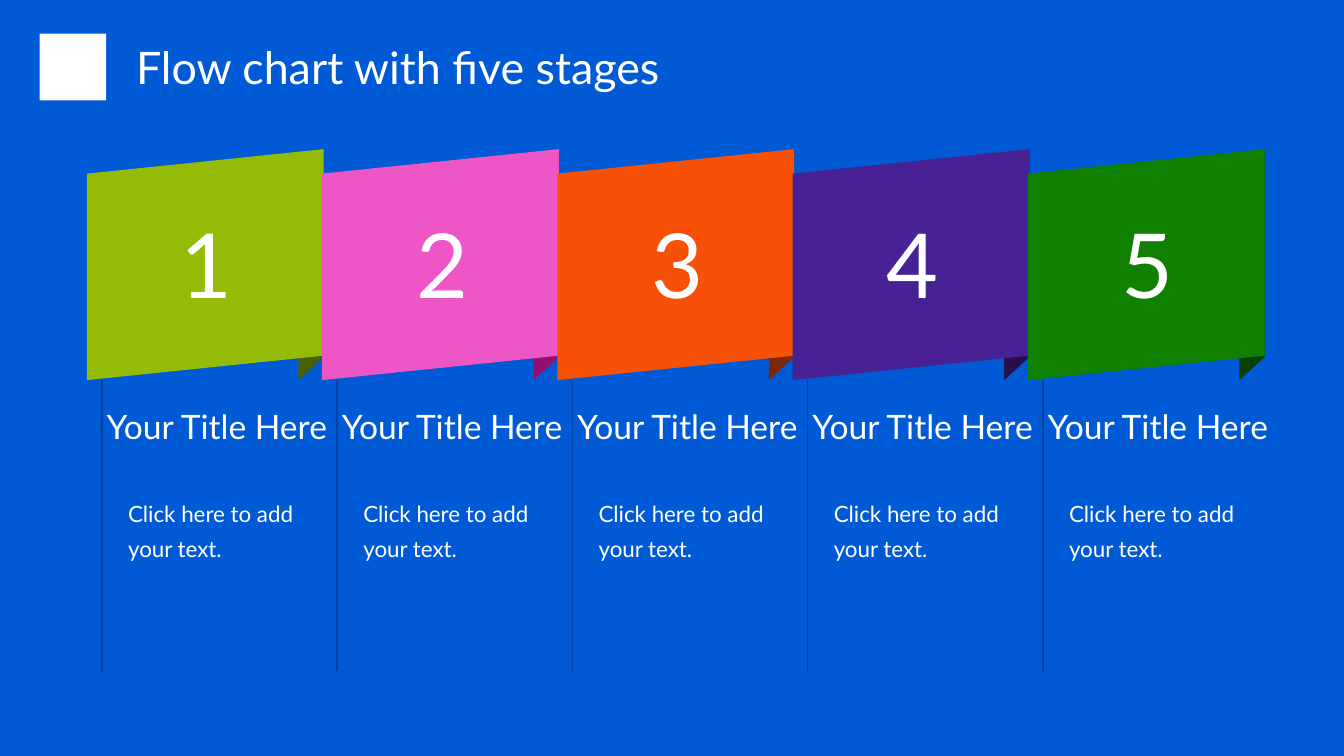
from dataclasses import dataclass

from lxml import etree
from pptx import Presentation
from pptx.dml.color import RGBColor
from pptx.enum.shapes import MSO_CONNECTOR, MSO_SHAPE
from pptx.enum.text import MSO_ANCHOR as Anchor, PP_ALIGN as Align
from pptx.oxml.ns import qn
from pptx.util import Cm, Pt


@dataclass(frozen=True)
class Theme:
    font: str = "Lato"
    background: str = "005AD5"
    text: str = "FFFFFF"
    divider: str = "0044A0"
    panels: tuple = ("94BB06", "EE56C5", "F65107", "482195", "0F8000")
    folds: tuple = ("4A5E03", "930F6F", "7B2804", "24104A", "084000")
    heading_size: int = 32
    number_size: int = 64
    title_size: int = 24
    body_size: int = 16


THEME = Theme()


def rgb(value):
    return RGBColor.from_string(value)


def add_filled(shapes, kind, left, top, width, height, color):
    sp = shapes.add_shape(kind, Cm(left), Cm(top), Cm(width), Cm(height))
    sp.shadow.inherit = False
    sp.fill.solid()
    sp.fill.fore_color.rgb = rgb(color)
    sp.line.fill.background()
    return sp


def add_slanted(shapes, left, top, width, height, slant, color):
    """Parallelogram with upright sides, turned to fill the given box."""
    shift = (width - height) / 2
    sp = add_filled(shapes, MSO_SHAPE.PARALLELOGRAM, left + shift, top - shift,
                    height, width, color)
    sp.adjustments[0] = slant
    sp.rotation = 270
    sp.element.spPr.find(qn("a:xfrm")).set("flipV", "1")


def add_text(shapes, left, top, width, height, text, size, align=Align.LEFT,
             anchor=Anchor.TOP, spacing=1.0):
    tf = shapes.add_textbox(Cm(left), Cm(top), Cm(width), Cm(height)).text_frame
    tf.word_wrap = True
    tf.vertical_anchor = anchor
    p = tf.paragraphs[0]
    p.text = text
    p.alignment = align
    p.line_spacing = spacing
    p.font.name = THEME.font
    p.font.size = Pt(size)
    p.font.color.rgb = rgb(THEME.text)


def add_divider(shapes, x, top, bottom):
    line = shapes.add_connector(MSO_CONNECTOR.STRAIGHT, Cm(x), Cm(top), Cm(x), Cm(bottom))
    line.line.color.rgb = rgb(THEME.divider)
    line.line.width = Pt(1)
    etree.SubElement(line.element.spPr, qn("a:effectLst"))


def add_header(slide, left, top, width, height):
    # Plain square in the emblem's place, then the heading
    side = 1.68
    add_filled(slide.shapes, MSO_SHAPE.RECTANGLE, left, top + (height - side) / 2,
               side, side, THEME.text)
    add_text(slide.shapes, left + 2.18, top, width - 2.18, height,
             "Flow chart with five stages", THEME.heading_size, anchor=Anchor.MIDDLE)


def add_stage(slide, left, top, width, height, number, panel_color, fold_color):
    shapes = slide.shapes.add_group_shape().shapes
    panel_height = 5.82

    # Folded ribbon
    add_slanted(shapes, left + width - 0.64, top, 0.64, panel_height, 0.908, fold_color)
    add_slanted(shapes, left, top, width, panel_height, 0.106, panel_color)

    # Divider and captions
    add_divider(shapes, left + 0.38, top + panel_height, top + height)
    add_text(shapes, left + 0.79, top + 8.51, 4.98, 2.03,
             "Click here to add your text.", THEME.body_size, spacing=1.3)
    add_text(shapes, left, top + 6.05, 6.55, 1.65, "Your Title Here",
             THEME.title_size, Align.CENTER, spacing=1.3)
    add_text(shapes, left + 0.93, top + 1.37, 4.19, 3, str(number),
             THEME.number_size, Align.CENTER, Anchor.MIDDLE)


def add_stages(slide, left, top, width, height):
    panel_width = 5.97
    pitch = (width - panel_width) / (len(THEME.panels) - 1)
    for i, colors in enumerate(zip(THEME.panels, THEME.folds)):
        add_stage(slide, left + i * pitch, top, panel_width, height, i + 1, *colors)


def main():
    prs = Presentation()
    prs.slide_width, prs.slide_height = Cm(33.88), Cm(19.05)
    slide = prs.slides.add_slide(prs.slide_layouts[6])
    slide.background.fill.solid()
    slide.background.fill.fore_color.rgb = rgb(THEME.background)
    add_header(slide, left=1, top=0.72, width=16.28, height=1.94)
    add_stages(slide, left=2.19, top=3.76, width=29.69, height=13.16)
    prs.save("out.pptx")


if __name__ == "__main__":
    main()
